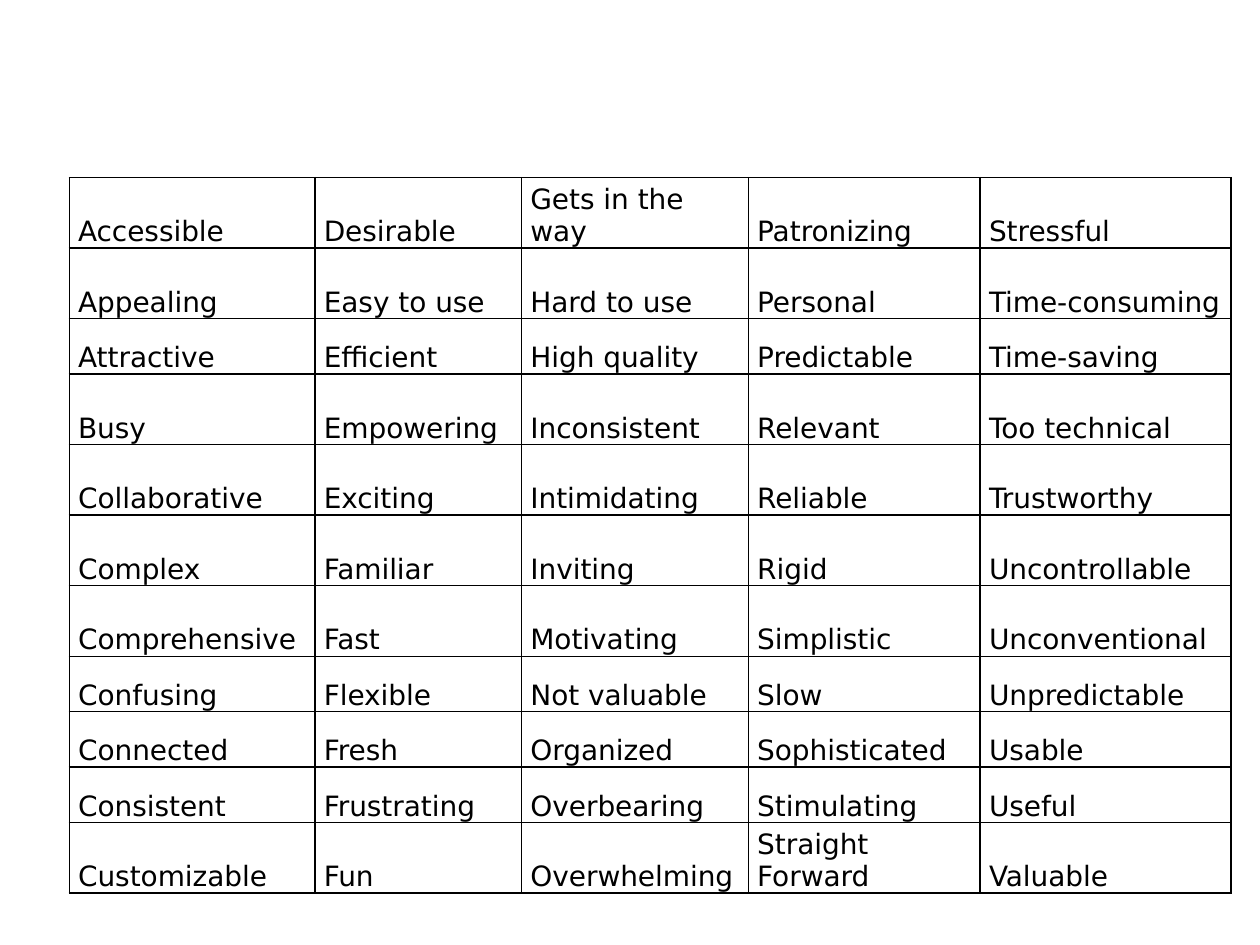
import dataclasses

import lxml.etree
import pptx
import pptx.dml.color
import pptx.enum.text
import pptx.oxml.ns
import pptx.util


@dataclasses.dataclass(frozen=True)
class Theme:
    font: str = "DejaVu Sans"
    size: int = 16
    ink: str = "000000"
    border: int = 1


THEME = Theme()
SLIDE_WIDTH, SLIDE_HEIGHT = 10, 7.5
TABLE_LEFT, TABLE_TOP = 0.55, 1.41
SIDE_MARGIN = 0.07
COLUMN_WIDTHS = [1.95, 1.64, 1.8, 1.84, 1.99]
TALL, SHORT = 0.56, 0.44
SHORT_ROWS = {2, 7, 8, 9}

# Reaction words, alphabetical down each column
WORD_COLUMNS = [
    ["Accessible", "Appealing", "Attractive", "Busy", "Collaborative", "Complex",
     "Comprehensive", "Confusing", "Connected", "Consistent", "Customizable"],
    ["Desirable", "Easy to use", "Efficient", "Empowering", "Exciting", "Familiar",
     "Fast", "Flexible", "Fresh", "Frustrating", "Fun"],
    ["Gets in the way", "Hard to use", "High quality", "Inconsistent",
     "Intimidating", "Inviting", "Motivating", "Not valuable", "Organized",
     "Overbearing", "Overwhelming"],
    ["Patronizing", "Personal", "Predictable", "Relevant", "Reliable", "Rigid",
     "Simplistic", "Slow", "Sophisticated", "Stimulating", "Straight Forward"],
    ["Stressful", "Time-consuming", "Time-saving", "Too technical", "Trustworthy",
     "Uncontrollable", "Unconventional", "Unpredictable", "Usable", "Useful",
     "Valuable"],
]


def add_borders(cell):
    """Draw a solid line on all four sides of a cell."""
    qualified = pptx.oxml.ns.qn
    properties = cell._tc.get_or_add_tcPr()
    for side in ("a:lnL", "a:lnR", "a:lnT", "a:lnB"):
        line = lxml.etree.SubElement(properties, qualified(side))
        line.set("w", str(pptx.util.Pt(THEME.border)))
        fill = lxml.etree.SubElement(line, qualified("a:solidFill"))
        lxml.etree.SubElement(fill, qualified("a:srgbClr")).set("val", THEME.ink)


def format_cell(cell, word):
    cell.text_frame.text = word
    cell.vertical_anchor = pptx.enum.text.MSO_ANCHOR.BOTTOM
    cell.margin_left = cell.margin_right = pptx.util.Inches(SIDE_MARGIN)
    cell.margin_top = cell.margin_bottom = 0
    font = cell.text_frame.paragraphs[0].runs[0].font
    font.name = THEME.font
    font.size = pptx.util.Pt(THEME.size)
    font.color.rgb = pptx.dml.color.RGBColor.from_string(THEME.ink)
    add_borders(cell)
    cell.fill.background()


def add_word_table(page):
    row_count = len(WORD_COLUMNS[0])
    heights = [SHORT if row in SHORT_ROWS else TALL for row in range(row_count)]
    lengths = (TABLE_LEFT, TABLE_TOP, sum(COLUMN_WIDTHS), sum(heights))
    table = page.shapes.add_table(
        row_count, len(WORD_COLUMNS), *map(pptx.util.Inches, lengths)).table
    table.first_row = table.horz_banding = False
    for row, height in zip(table.rows, heights):
        row.height = pptx.util.Inches(height)
    for column, (width, words) in enumerate(zip(COLUMN_WIDTHS, WORD_COLUMNS)):
        table.columns[column].width = pptx.util.Inches(width)
        for row, word in enumerate(words):
            format_cell(table.cell(row, column), word)


def main():
    deck = pptx.Presentation()
    deck.slide_width = pptx.util.Inches(SLIDE_WIDTH)
    deck.slide_height = pptx.util.Inches(SLIDE_HEIGHT)
    blank_layout = deck.slide_layouts[6]
    add_word_table(deck.slides.add_slide(blank_layout))
    deck.save("out.pptx")


if __name__ == "__main__":
    main()
